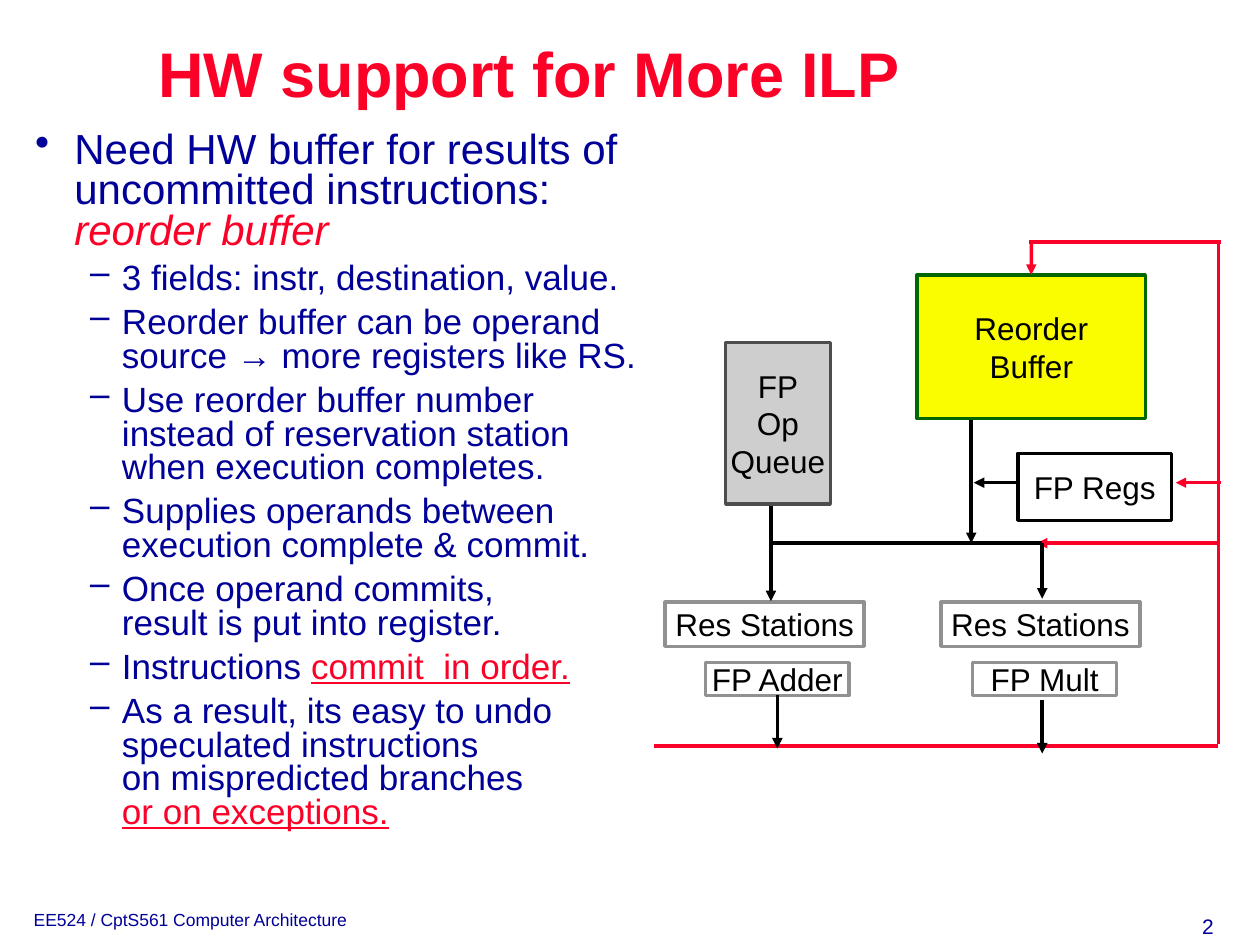
from lxml import etree
from pptx import Presentation
from pptx.dml.color import RGBColor
from pptx.enum.shapes import MSO_CONNECTOR, MSO_SHAPE
from pptx.enum.text import MSO_ANCHOR, MSO_AUTO_SIZE, PP_ALIGN
from pptx.oxml.ns import qn
from pptx.util import Cm, Pt

STRAIGHT = MSO_CONNECTOR.STRAIGHT
RECTANGLE = MSO_SHAPE.RECTANGLE
MIDDLE = MSO_ANCHOR.MIDDLE
NO_AUTOFIT = MSO_AUTO_SIZE.NONE
LEFT, CENTER, RIGHT = PP_ALIGN.LEFT, PP_ALIGN.CENTER, PP_ALIGN.RIGHT
TOP_SITE, BOTTOM_SITE = 0, 2

COLORS = {
    "red": "FC0128", "navy": "000099", "black": "000000", "white": "FFFFFF",
    "yellow": "FAFD00", "green": "006600", "light_gray": "CECECE",
    "dark_gray": "4D4D4D", "gray": "919191",
}


def rgb(name):
    return RGBColor.from_string(COLORS[name])


class SlideBuilder:
    font_name = "Arial"

    def __init__(self, slide):
        self.slide = slide

    def format_runs(self, paragraph, size, color):
        for run in paragraph.runs:
            run.font.name = self.font_name
            run.font.size = Pt(size)
            run.font.color.rgb = rgb(color)

    def title(self, text, left, top, width, height):
        shape = self.slide.shapes.title
        shape.left, shape.top, shape.width, shape.height = map(Cm, (left, top, width, height))
        frame = shape.text_frame
        frame.text = text
        frame.auto_size = NO_AUTOFIT
        frame.vertical_anchor = MIDDLE
        paragraph = frame.paragraphs[0]
        paragraph.alignment = CENTER
        paragraph.line_spacing = 0.9
        self.format_runs(paragraph, 36, "red")
        paragraph.runs[0].font.bold = True

    def text_box(self, left, top, width, height):
        frame = self.slide.shapes.add_textbox(*map(Cm, (left, top, width, height))).text_frame
        frame.word_wrap = True
        return frame

    def label(self, text, left, top, width, height, size, alignment=LEFT):
        frame = self.text_box(left, top, width, height)
        frame.text = text
        frame.paragraphs[0].alignment = alignment
        self.format_runs(frame.paragraphs[0], size, "navy")

    def bullet(self, paragraph, level, text, accent=""):
        character, indent, hanging, size, space = (
            ("•", 0.79, 0.79, 24, 0) if level == 0 else ("–", 1.75, 0.64, 20, 6))
        paragraph.text = text
        paragraph.level = level
        paragraph.line_spacing = 0.8
        paragraph.space_before = Pt(space)
        self.format_runs(paragraph, size, "navy")
        if accent:
            run = paragraph.add_run()
            run.text = accent
            run.font.name = self.font_name
            run.font.size = Pt(size)
            run.font.color.rgb = rgb("red")
            run.font.italic = level == 0
            run.font.underline = level == 1
        properties = paragraph._p.get_or_add_pPr()
        properties.set("marL", str(Cm(indent)))
        properties.set("indent", str(-Cm(hanging)))
        etree.SubElement(properties, qn("a:buChar")).set("char", character)

    def block(self, text, left, top, width, height, fill, outline):
        shape = self.slide.shapes.add_shape(RECTANGLE, *map(Cm, (left, top, width, height)))
        shape.shadow.inherit = False
        shape.fill.solid()
        shape.fill.fore_color.rgb = rgb(fill)
        shape.line.color.rgb = rgb(outline)
        shape.line.width = Pt(2)
        frame = shape.text_frame
        frame.text = text
        frame.word_wrap = False
        frame.vertical_anchor = MIDDLE
        for paragraph in frame.paragraphs:
            paragraph.alignment = CENTER
            self.format_runs(paragraph, 18, "black")
        return shape

    def line(self, start_x, start_y, end_x, end_y, color="black", arrow=True, width=2):
        connector = self.slide.shapes.add_connector(
            STRAIGHT, *map(Cm, (start_x, start_y, end_x, end_y)))
        connector.line.color.rgb = rgb(color)
        connector.line.width = Pt(width)
        if arrow:
            etree.SubElement(connector.line._get_or_add_ln(), qn("a:tailEnd")).set("type", "triangle")
        etree.SubElement(connector._element.spPr, qn("a:effectLst"))
        return connector


BULLETS = [
    (0, "Need HW buffer for results of uncommitted instructions: ", "reorder buffer"),
    (1, "3 fields: instr, destination, value."),
    (1, "Reorder buffer can be operand source → more registers like RS."),
    (1, "Use reorder buffer number instead of reservation station when execution completes."),
    (1, "Supplies operands between execution complete & commit."),
    (1, "Once operand commits, \vresult is put into register."),
    (1, "Instructions ", "commit  in order."),
    (1, "As a result, its easy to undo speculated instructions \von mispredicted branches \v",
     "or on exceptions."),
]


def main():
    presentation = Presentation()
    presentation.slide_width, presentation.slide_height = Cm(25.4), Cm(19.05)
    builder = SlideBuilder(presentation.slides.add_slide(presentation.slide_layouts[5]))

    # Footer and title
    builder.label("2", 23.7, 18.29, 1.02, 0.76, 12, RIGHT)
    builder.label("EE524 / CptS561 Computer Architecture", 0.43, 18.19, 11.63, 0.69, 10)
    builder.title("HW support for More ILP", 2.67, 0.99, 16, 1.14)

    # Bullet list
    frame = builder.text_box(0.46, 2.54, 12.88, 15.04)
    for index, bullet in enumerate(BULLETS):
        paragraph = frame.paragraphs[0] if index == 0 else frame.add_paragraph()
        builder.bullet(paragraph, *bullet)

    # Hardware blocks
    reorder_buffer = builder.block("Reorder\nBuffer", 18.49, 5.54, 4.6, 2.9, "yellow", "green")
    builder.block("FP Regs", 20.52, 9.14, 3.1, 1.35, "white", "black")
    builder.block("FP\nOp\nQueue", 14.63, 6.91, 2.11, 3.25, "light_gray", "dark_gray")
    adder = builder.block("FP Adder", 14.22, 13.36, 2.9, 0.66, "white", "gray")
    builder.block("FP Mult", 19.61, 13.36, 2.9, 0.66, "white", "gray")
    for left in (13.41, 18.97):
        builder.block("Res Stations", left, 12.14, 4.01, 0.89, "white", "gray")

    # Result bus, back to the reorder buffer, registers and stations
    bus_x, bus_y, top_y, operand_y, register_y = 24.56, 15.04, 4.88, 10.95, 9.73
    builder.line(13.18, bus_y, bus_x, bus_y, "red", arrow=False, width=2.25)
    builder.line(bus_x, top_y, bus_x, 14.99, "red", arrow=False)
    builder.line(24.61, top_y, 20.75, top_y, "red", arrow=False)
    builder.line(20.79, top_y, 20.79, 5.54, "red").end_connect(reorder_buffer, TOP_SITE)
    builder.line(bus_x, operand_y, 20.9, operand_y, "red")
    builder.line(24.61, register_y, 23.7, register_y, "red")

    # Operand paths
    queue_x, mult_x, buffer_x = 15.54, 21.01, 19.58
    builder.line(15.67, 14.02, 15.67, 15.09).begin_connect(adder, BOTTOM_SITE)
    builder.line(mult_x, 14.12, mult_x, 15.19)
    builder.line(queue_x, 10.21, queue_x, 12.12)
    builder.line(queue_x, operand_y, mult_x, operand_y, arrow=False)
    builder.line(mult_x, operand_y, mult_x, 12.07)
    builder.line(buffer_x, 8.46, buffer_x, operand_y)
    builder.line(20.52, register_y, 19.63, register_y)

    presentation.save("out.pptx")


if __name__ == "__main__":
    main()
